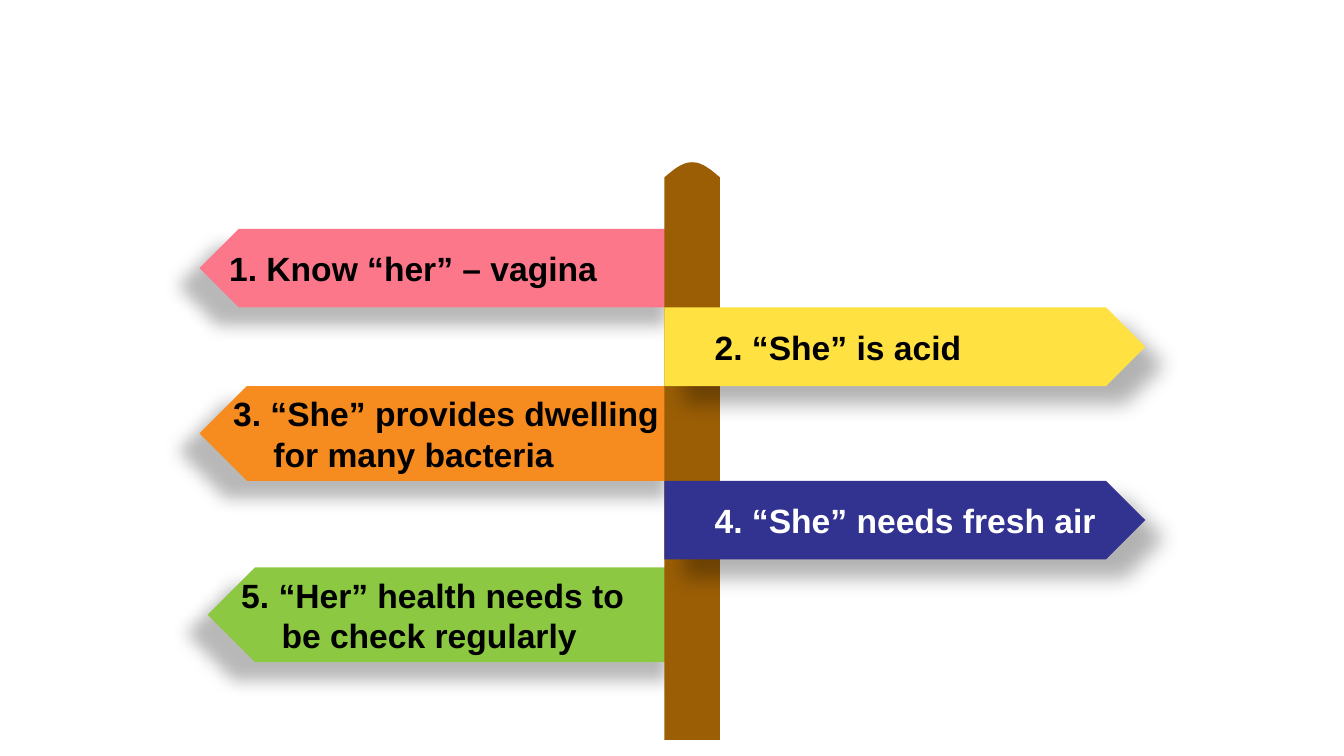
import math

import lxml.etree
import pptx
import pptx.dml.color
import pptx.enum.shapes
import pptx.enum.text
import pptx.oxml.ns
import pptx.util

Inches = pptx.util.Inches
Pt = pptx.util.Pt

POST_LEFT = 6.59
POST_RIGHT = 7.14
LEFT_SHADOW = (28, 11.8, 19.7, 141)
RIGHT_SHADOW = (30, 15, 18, 45)


def color(hex_string):
    return pptx.dml.color.RGBColor.from_string(hex_string)


class SignpostSlide:
    font_name = "Arial"
    font_size = 24

    def __init__(self, presentation):
        self.slide = presentation.slides.add_slide(presentation.slide_layouts[6])

    def paint(self, shape, fill):
        shape.shadow.inherit = False
        shape.fill.solid()
        shape.fill.fore_color.rgb = color(fill)
        shape.line.fill.background()

    def add_shadow(self, shape, opacity, blur, distance, angle):
        qn = pptx.oxml.ns.qn
        effects = shape._element.spPr.find(qn("a:effectLst"))
        shadow = lxml.etree.SubElement(
            effects, qn("a:outerShdw"), blurRad=str(Pt(blur)), dist=str(Pt(distance)),
            dir=str(angle * 60000), algn="ctr", rotWithShape="0")
        shade = lxml.etree.SubElement(shadow, qn("a:srgbClr"), val="000000")
        lxml.etree.SubElement(shade, qn("a:alpha"), val=str(opacity * 1000))

    def add_sign(self, text, left, top, width, height, fill, text_color="000000",
                 points_left=False, margin=0, indent=0):
        shape = self.slide.shapes.add_shape(
            pptx.enum.shapes.MSO_SHAPE.PENTAGON,
            Inches(left), Inches(top), Inches(width), Inches(height))
        self.paint(shape, fill)
        self.add_shadow(shape, *(LEFT_SHADOW if points_left else RIGHT_SHADOW))
        if points_left:
            shape._element.spPr.xfrm.set("flipH", "1")
        frame = shape.text_frame
        frame.word_wrap = True
        frame.vertical_anchor = pptx.enum.text.MSO_ANCHOR.MIDDLE
        frame.text = text
        paragraph = frame.paragraphs[0]
        paragraph.alignment = pptx.enum.text.PP_ALIGN.LEFT
        properties = paragraph._p.get_or_add_pPr()
        properties.set("marL", str(Inches(margin)))
        properties.set("indent", str(Inches(indent)))
        paragraph.font.name = self.font_name
        paragraph.font.size = Pt(self.font_size)
        paragraph.font.bold = True
        paragraph.font.color.rgb = color(text_color)

    def add_post(self, shoulder, rise, bottom, fill):
        steps = 24
        width = POST_RIGHT - POST_LEFT
        dome = [(POST_LEFT + width * step / steps,
                 shoulder - rise * math.sin(math.pi * step / steps))
                for step in range(steps + 1)]
        builder = self.slide.shapes.build_freeform(
            Inches(POST_LEFT), Inches(bottom), scale=1.0)
        outline = dome + [(POST_RIGHT, bottom)]
        builder.add_line_segments([(Inches(x), Inches(y)) for x, y in outline])
        self.paint(builder.convert_to_shape(), fill)


def main():
    presentation = pptx.Presentation()
    presentation.slide_width = Inches(13.33)
    presentation.slide_height = Inches(7.5)
    signpost = SignpostSlide(presentation)

    left_signs = [
        ("5. “Her” health needs to\vbe check regularly", 2.06, 5.63, 4.77, 0.94, "8CC841", 0.4),
        ("3. “She” provides dwelling\vfor many bacteria", 1.98, 3.83, 4.84, 0.94, "F68B1F", 0.4),
        ("1. Know “her” – vagina", 1.98, 2.27, 4.84, 0.78, "FD778A", 0),
    ]
    for text, left, top, width, height, fill, hanging in left_signs:
        signpost.add_sign(text, left, top, width, height, fill,
                          points_left=True, margin=hanging, indent=-hanging)

    signpost.add_post(shoulder=1.76, rise=0.15, bottom=7.34, fill="9B5E05")

    right_signs = [
        ("2. “She” is acid", 3.05, "FFE241", "000000"),
        ("4. “She” needs fresh air", 4.77, "323291", "FFFFFF"),
    ]
    for text, top, fill, text_color in right_signs:
        signpost.add_sign(text, POST_LEFT, top, 4.77, 0.78, fill, text_color, margin=0.4)

    presentation.save("out.pptx")


if __name__ == "__main__":
    main()
